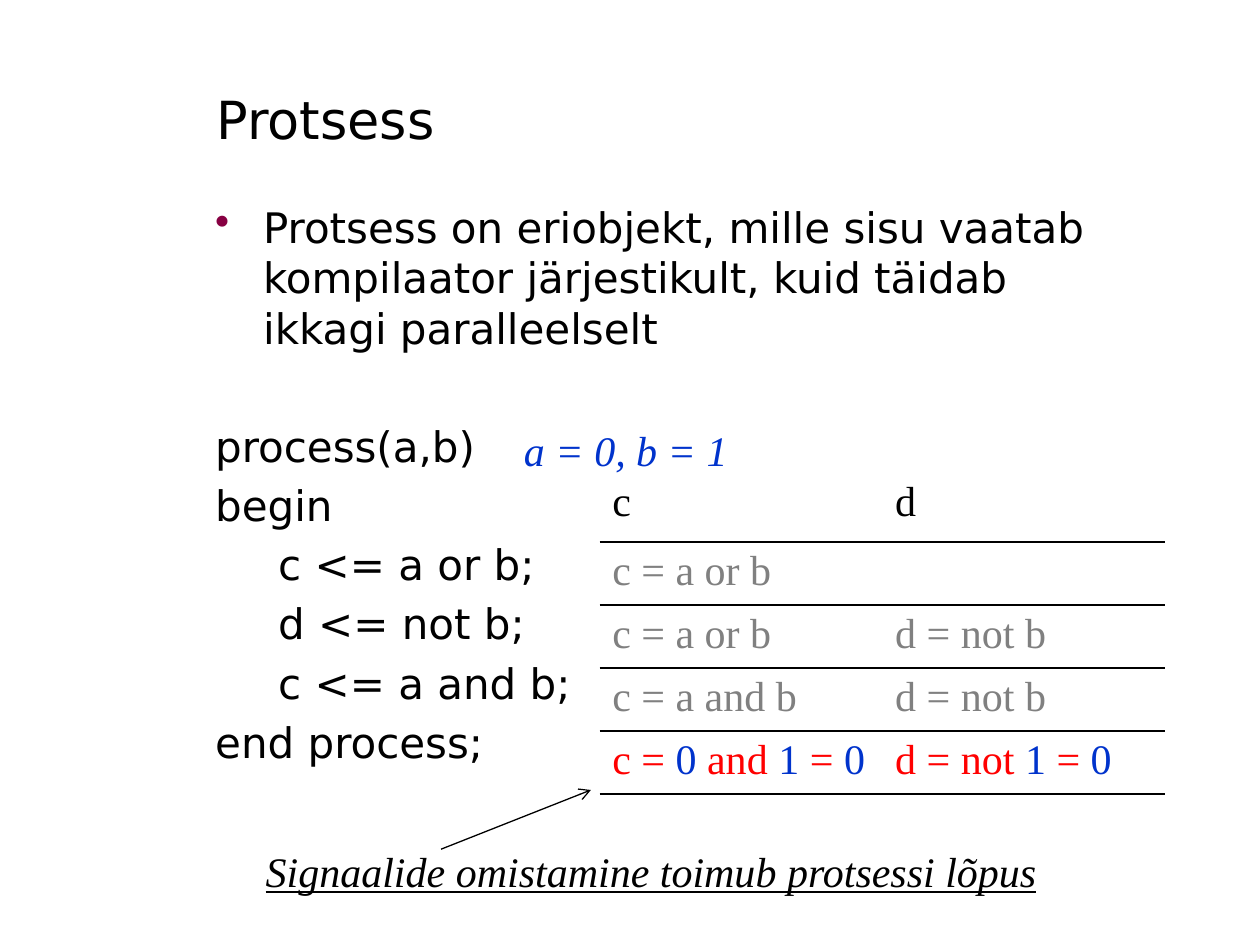
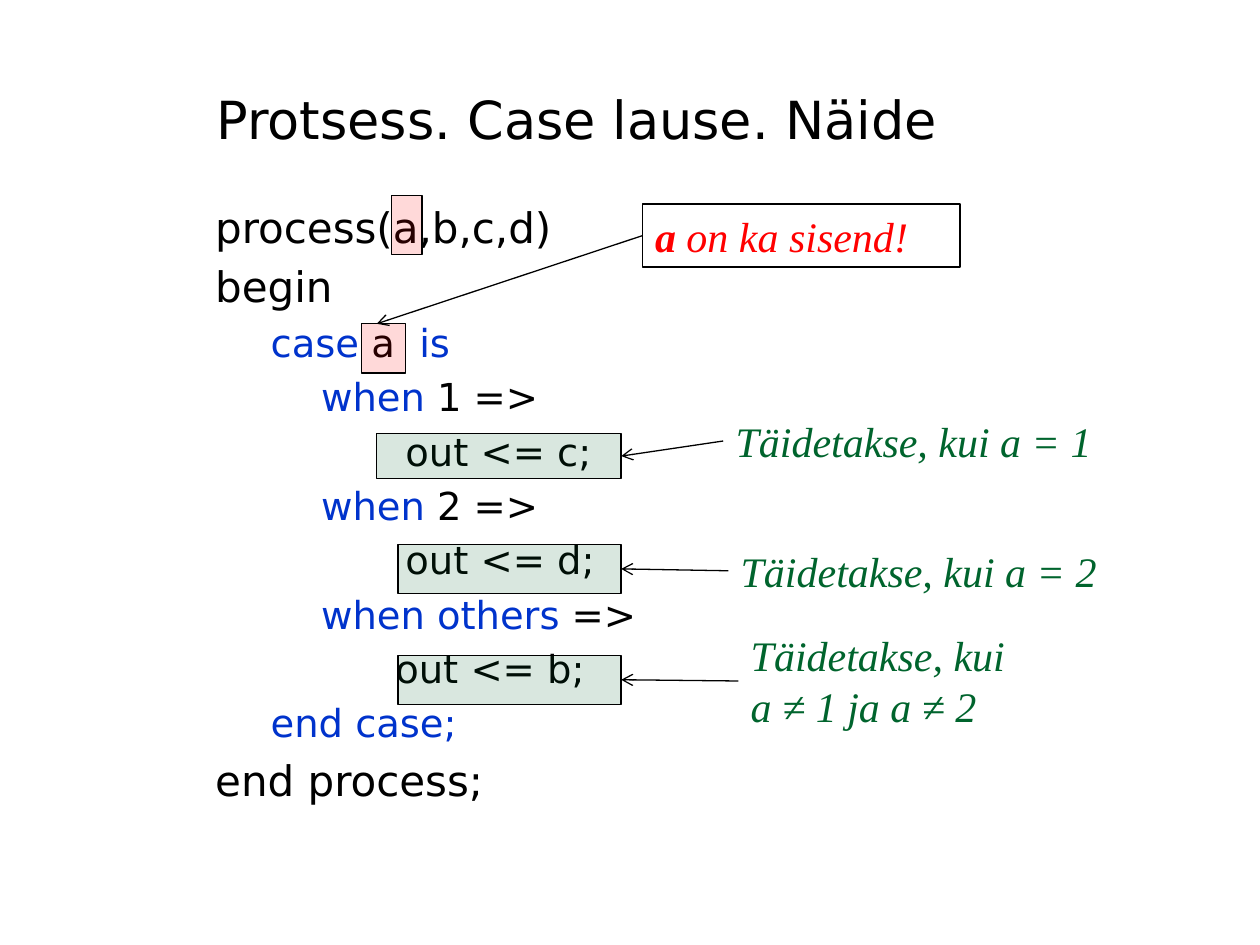
from lxml import etree
from pptx import Presentation
from pptx.dml.color import RGBColor
from pptx.enum.shapes import MSO_CONNECTOR as CONN, MSO_SHAPE as SHAPE
from pptx.enum.text import MSO_ANCHOR as ANCHOR
from pptx.oxml.ns import qn
from pptx.util import Inches, Pt

BLACK = RGBColor(0x00, 0x00, 0x00)
GRAY = RGBColor(0x80, 0x80, 0x80)
RED = RGBColor(0xFF, 0x00, 0x00)
BLUE = RGBColor(0x00, 0x33, 0xCC)
GREEN = RGBColor(0x00, 0x64, 0x2D)
WINE = RGBColor(0x87, 0x00, 0x42)

SANS, SERIF = "DejaVu Sans", "Times New Roman"
COLS, ROWS = 100, 75                      # grid over the whole slide
TITLE = (16.2, 4.7, 74.4, 9.4)
BODY = (16.1, 15.5, 74.8, 52.9)
LEFT, RIGHT = 1, 3                        # connection sites


def sub(parent, tag, **attrs):
    return etree.SubElement(parent, qn(tag), attrs)


def write(p, pieces, size=24, font=SANS, color=BLACK, italic=False, underline=False):
    """Fill a paragraph; a piece is plain text or (text, own format)."""
    for piece in [pieces] if isinstance(pieces, str) else pieces:
        text, own = (piece, {}) if isinstance(piece, str) else piece
        r = p.add_run()
        r.text = text
        f = r.font
        f.name, f.size, f.italic, f.underline = font, Pt(size), italic, underline
        f.bold = own.get("bold", False)
        f.color.rgb = own.get("color", color)
        if "spread" in own:
            r._r.get_or_add_rPr().set("spc", str(own["spread"] * 100))


def tint(text, color):
    return text, {"color": color}


class Deck:
    def __init__(self):
        self.prs = Presentation()
        self.prs.slide_width, self.prs.slide_height = Inches(10), Inches(7.5)
        self.s = None

    def x(self, cols):
        return round(self.prs.slide_width * cols / COLS)

    def y(self, rows):
        return round(self.prs.slide_height * rows / ROWS)

    def box(self, left, top, width, height):
        return self.x(left), self.y(top), self.x(width), self.y(height)

    def slide(self, title):
        self.s = self.prs.slides.add_slide(self.prs.slide_layouts[6])
        self.text(TITLE, [title], anchor=ANCHOR.MIDDLE, size=30)

    def text(self, at, lines, anchor=ANCHOR.TOP, **fmt):
        sp = self.s.shapes.add_textbox(*self.box(*at))
        tf = sp.text_frame
        tf.word_wrap, tf.vertical_anchor = True, anchor
        for i, line in enumerate(lines):
            p = tf.paragraphs[0] if i == 0 else tf.add_paragraph()
            write(p, line, **fmt)
        return sp

    def note(self, at, lines, **fmt):
        return self.text(at, lines, font=SERIF, italic=True, **fmt)

    def body(self, lines):
        """Each line: (indent in columns, size, pieces, options)."""
        tf = self.s.shapes.add_textbox(*self.box(*BODY)).text_frame
        tf.word_wrap = True
        for i, (indent, size, pieces, *options) in enumerate(lines):
            opt = options[0] if options else {}
            p = tf.paragraphs[0] if i == 0 else tf.add_paragraph()
            pPr = p._p.get_or_add_pPr()
            pPr.set("marL", str(self.x(indent)))
            pPr.set("indent", "0")
            if opt.get("bullet"):
                pPr.set("indent", str(-self.x(indent)))
                sub(sub(pPr, "a:buClr"), "a:srgbClr", val=str(WINE))
                sub(pPr, "a:buChar", char="•")
            if i:
                p.space_before = Pt(opt.get("before", size * 0.21))
            write(p, pieces, size=size)

    def outline(self, sp):
        sp.line.color.rgb, sp.line.width = BLACK, Pt(0.75)

    def highlight(self, at, color):
        sp = self.s.shapes.add_shape(SHAPE.RECTANGLE, *self.box(*at))
        sp.shadow.inherit = False
        sp.fill.solid()
        sp.fill.fore_color.rgb = color
        sub(sp.fill._xPr.find(".//" + qn("a:srgbClr")), "a:alpha", val="15000")
        self.outline(sp)
        return sp

    def arrow(self, start=(0, 0), end=(0, 0), source=None, target=None):
        c = self.s.shapes.add_connector(CONN.STRAIGHT, self.x(start[0]), self.y(start[1]),
                                        self.x(end[0]), self.y(end[1]))
        if source is not None:
            c.begin_connect(source, LEFT)
        if target is not None:
            c.end_connect(target, RIGHT)
        self.outline(c)
        sub(c.line._get_or_add_ln(), "a:tailEnd", type="arrow")
        sub(c._element.spPr, "a:effectLst")

    def table(self, at, heights, rows):
        t = self.s.shapes.add_table(len(rows), len(rows[0]), *self.box(*at)).table
        t.first_row = t.horz_banding = False
        for i, (height, row) in enumerate(zip(heights, rows)):
            t.rows[i].height = self.y(height)
            for j, pieces in enumerate(row):
                cell = t.cell(i, j)
                p = cell.text_frame.paragraphs[0]
                p.font.size = Pt(24)
                write(p, pieces, font=SERIF, color=GRAY if i else BLACK)
                self.rules(cell, top=i > 0)
                cell.fill.background()

    def rules(self, cell, top):
        tcPr = cell._tc.get_or_add_tcPr()
        for side, shown in (("L", False), ("R", False), ("T", top), ("B", True)):
            ln = sub(tcPr, "a:ln" + side, w=str(Pt(1)))
            if shown:
                sub(sub(ln, "a:solidFill"), "a:srgbClr", val=str(BLACK))
            else:
                sub(ln, "a:noFill")


def process_slide(d):
    d.slide("Protsess")
    d.body([
        (3.8, 24, "Protsess on eriobjekt, mille sisu vaatab kompilaator järjestikult, "
                  "kuid täidab ikkagi paralleelselt", {"bullet": True}),
        (0, 24, "process(a,b)", {"before": 38.5}),
        (0, 24, "begin"),
        (5, 24, "c <= a or b;"),
        (5, 24, "d <= not b;"),
        (5, 24, "c <= a and b;"),
        (0, 24, "end process;"),
    ])

    # Signal values after each statement
    zero, one, equals = tint("0", BLUE), tint("1", BLUE), tint(" = ", RED)
    d.table((47.6, 37.5, 44.9, 24.5), [5.5, 4.9, 4.7, 4.7, 4.7], [
        ["c", "d"],
        ["c = a or b", ""],
        ["c = a or b", "d = not b"],
        ["c = a and b", "d = not b"],
        [[tint("c = ", RED), zero, tint(" and ", RED), one, equals, zero],
         [tint("d = not ", RED), one, equals, zero]],
    ])

    # Remarks
    d.note((40.6, 33.2, 18.9, 5), ["a = 0, b = 1"], color=BLUE)
    d.note((20.1, 66.6, 68.5, 5), ["Signaalide omistamine toimub protsessi lõpus"],
           underline=True)
    d.arrow((35, 67.4), (46.9, 62.7))


def case_slide(d):
    d.slide("Protsess. Case lause. Näide")
    case, when, out = 4.4, 8.4, 15.1      # indents of the code levels
    d.body([
        (0, 24, "process(a,b,c,d)"),
        (0, 24, "begin"),
        (case, 22, [tint("case ", BLUE), "a", (" ", {"spread": 7}), tint("is", BLUE)]),
        (when, 22, [tint("when ", BLUE), "1 =>"]),
        (out, 22, "out <= c;"),
        (when, 22, [tint("when ", BLUE), "2 =>"]),
        (out, 22, "out <= d;"),
        (when, 22, [tint("when others ", BLUE), "=>"]),
        (out - 0.8, 22, "out <= b;"),
        (case, 22, [tint("end case;", BLUE)]),
        (0, 24, "end process;"),
    ])

    # The input being tested
    for at in ((28.7, 25.7, 3.5, 3.9), (31.1, 15.5, 2.4, 4.7)):
        d.highlight(at, RED)

    # Branches and when they run
    branches = [
        ((29.9, 34.4, 19.4, 3.6), (57.4, 32.5, 36.9, 5), ["Täidetakse, kui a = 1"]),
        ((31.6, 43.2, 17.7, 3.9), (57.8, 42.8, 36.9, 5), ["Täidetakse, kui a = 2"]),
        ((31.6, 52, 17.7, 3.9), (58.6, 49.5, 36.9, 9.1),
         ["Täidetakse, kui", "a ≠ 1 ja a ≠ 2"]),
    ]
    for branch_at, note_at, lines in branches:
        branch = d.highlight(branch_at, GREEN)
        note = d.note(note_at, lines, color=GREEN)
        d.arrow(source=note, target=branch)

    # Callout on the input
    callout = d.note((51, 16.2, 25.2, 5), [[("a", {"bold": True}), " on ka sisend!"]],
                     color=RED)
    d.outline(callout)
    d.arrow(end=(29.9, 25.7), source=callout)


def main():
    d = Deck()
    process_slide(d)
    case_slide(d)
    d.prs.save("out.pptx")


if __name__ == "__main__":
    main()
